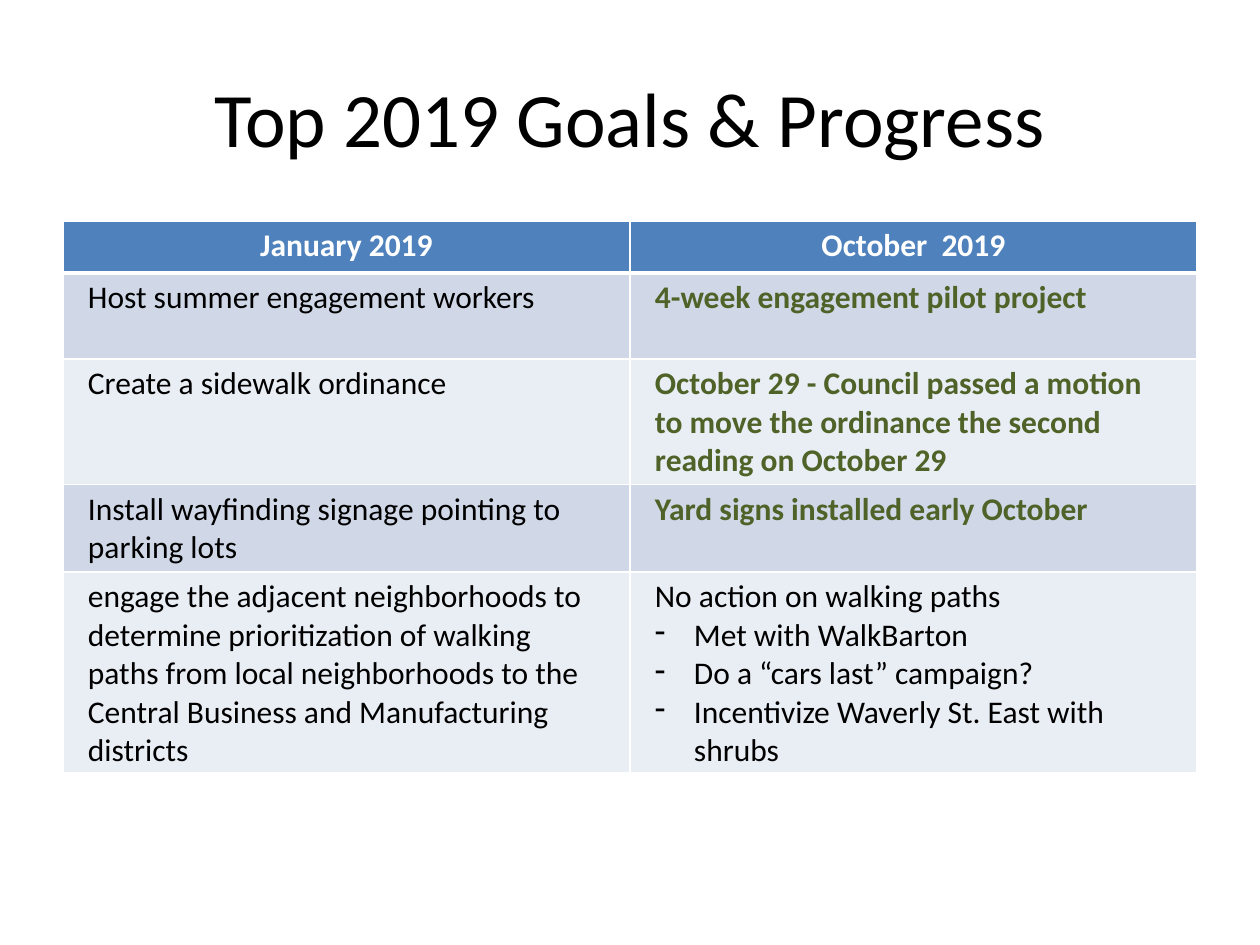
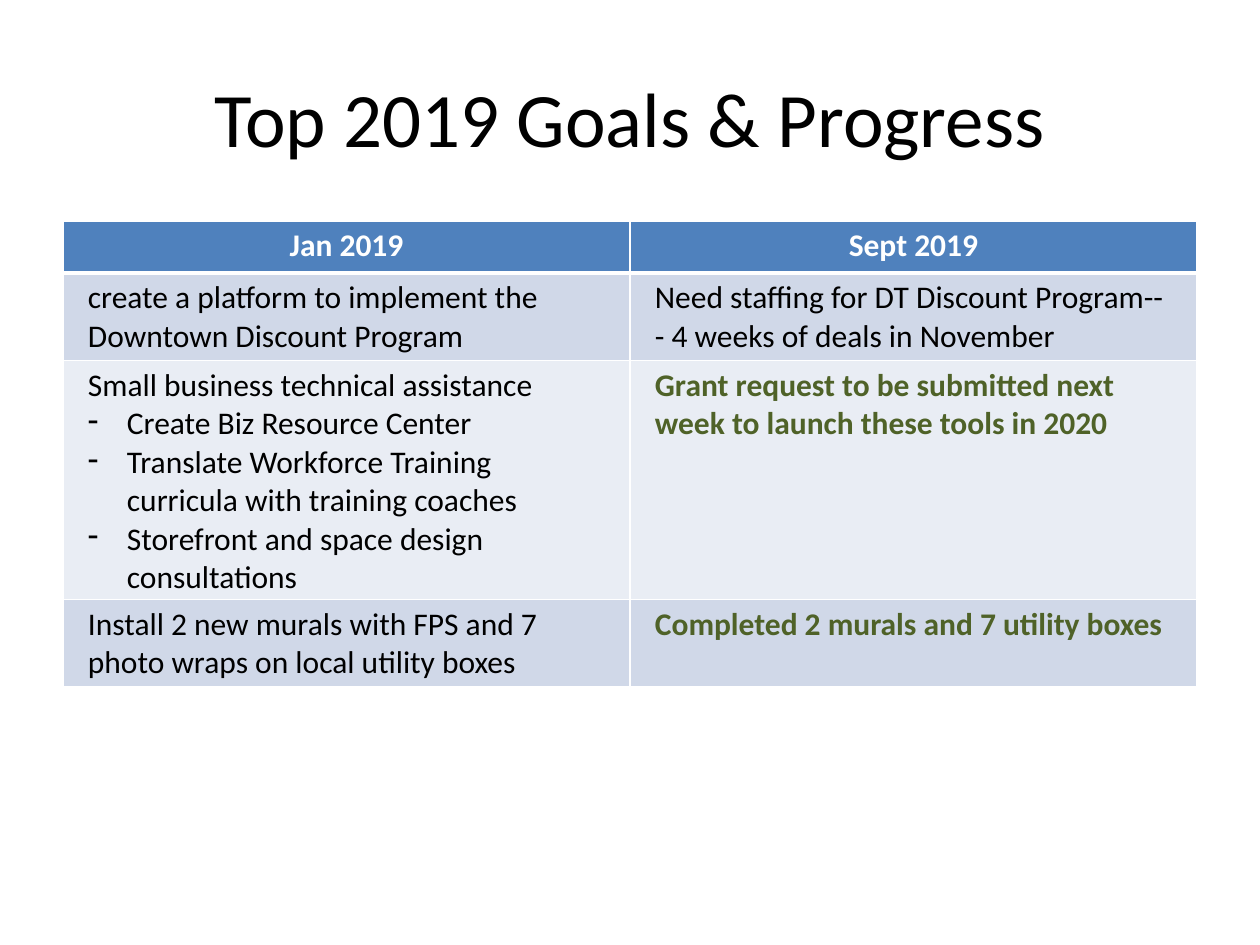
from lxml import etree
from pptx import Presentation
from pptx import util as u
from pptx.dml.color import RGBColor
from pptx.enum import text
from pptx.oxml import ns

PX = 914400 / 126
FONT = "Calibri"
WHITE, BLACK, BLUE, GREEN = "FFFFFF", "000000", "4F81BD", "4F6228"
BANDS = ("D0D8E8", "E9EDF4")
HEADER_HEIGHT, FIRST_GOAL_HEIGHT, GOAL_HEIGHT = 52, 86, 52
BULLET = "- "
BULLET_INDENT = 39

TITLE = "Top 2019 Goals & Progress"

EARLY_GOALS = [
    ("Host summer engagement workers", "4-week engagement pilot project", GREEN),
    ("Create a sidewalk ordinance",
     "October 29 - Council passed a motion to move the ordinance the second "
     "reading on October 29", GREEN),
    ("Install wayfinding signage pointing to parking lots",
     "Yard signs installed early October", GREEN),
    ("engage the adjacent neighborhoods to determine prioritization of walking "
     "paths from local neighborhoods to the Central Business and Manufacturing "
     "districts",
     "No action on walking paths\n"
     "- Met with WalkBarton\n"
     "- Do a “cars last” campaign?\n"
     "- Incentivize Waverly St. East with shrubs", BLACK),
]

BUSINESS_GOALS = [
    ("create a platform to implement the Downtown Discount Program",
     "Need staffing for DT Discount Program-- - 4 weeks of deals in November",
     BLACK),
    ("Small business technical assistance\n"
     "- Create Biz Resource Center\n"
     "- Translate Workforce Training curricula with training coaches\n"
     "- Storefront and space design consultations",
     "Grant request to be submitted next week to launch these tools in 2020",
     GREEN),
    ("Install 2 new murals with FPS and 7 photo wraps on local utility boxes",
     "Completed 2 murals and 7 utility boxes", GREEN),
]


def px(length):
    return u.Emu(round(length * PX))


def rgb(value):
    return RGBColor.from_string(value)


def add_bullet(paragraph):
    properties = paragraph._p.get_or_add_pPr()
    properties.set("marL", str(px(BULLET_INDENT)))
    properties.set("indent", str(-px(BULLET_INDENT)))
    etree.SubElement(properties, ns.qn("a:buChar")).set("char", BULLET.strip())


def write(frame, content, size=18, color=BLACK, bold=False, centered=False):
    frame.word_wrap = True
    for index, line in enumerate(content.split("\n")):
        paragraph = frame.add_paragraph() if index else frame.paragraphs[0]
        paragraph.alignment = text.PP_ALIGN.CENTER if centered else text.PP_ALIGN.LEFT
        if line.startswith(BULLET):
            add_bullet(paragraph)
        run = paragraph.add_run()
        run.text = line.removeprefix(BULLET)
        run.font.name = FONT
        run.font.size = u.Pt(size)
        run.font.bold = bold
        run.font.color.rgb = rgb(color)


def add_borders(cell, top=1, bottom=1):
    properties = cell._tc.get_or_add_tcPr()
    for side, width in (("L", 1), ("R", 1), ("T", top), ("B", bottom)):
        line = etree.SubElement(properties, ns.qn(f"a:ln{side}"), w=str(u.Pt(width)))
        fill = etree.SubElement(line, ns.qn("a:solidFill"))
        etree.SubElement(fill, ns.qn("a:srgbClr"), val=WHITE)


def fill_cell(cell, content, background, top=1, bottom=1, **style):
    cell.margin_left = cell.margin_right = px(25)
    cell.margin_top = cell.margin_bottom = px(6)
    add_borders(cell, top, bottom)
    cell.fill.solid()
    cell.fill.fore_color.rgb = rgb(background)
    write(cell.text_frame, content, **style)


def add_title(slide):
    title = slide.shapes.add_textbox(px(63), px(38), px(1134), px(157))
    title.text_frame.vertical_anchor = text.MSO_ANCHOR.MIDDLE
    write(title.text_frame, TITLE, size=44, centered=True)


def add_goal_table(slide, periods, goals):
    heights = [HEADER_HEIGHT, FIRST_GOAL_HEIGHT] + [GOAL_HEIGHT] * (len(goals) - 1)
    table = slide.shapes.add_table(len(heights), 2, px(63), px(221),
                                   px(1134), px(sum(heights))).table
    table.horz_banding = False
    for row, height in zip(table.rows, heights):
        row.height = px(height)
    for column, period in enumerate(periods):
        fill_cell(table.cell(0, column), period, BLUE, bottom=3,
                  color=WHITE, bold=True, centered=True)
    for row, (goal, progress, color) in enumerate(goals, 1):
        band = BANDS[(row - 1) % 2]
        top = 3 if row == 1 else 1
        fill_cell(table.cell(row, 0), goal, band, top=top)
        fill_cell(table.cell(row, 1), progress, band, top=top,
                  color=color, bold=color == GREEN)


def add_goal_slide(deck, periods, goals):
    slide = deck.slides.add_slide(deck.slide_layouts[6])
    add_title(slide)
    add_goal_table(slide, periods, goals)


def main():
    deck = Presentation()
    deck.slide_width, deck.slide_height = px(1260), px(945)
    add_goal_slide(deck, ("January 2019", "October  2019"), EARLY_GOALS)
    add_goal_slide(deck, ("Jan 2019", "Sept 2019"), BUSINESS_GOALS)
    deck.save("out.pptx")


if __name__ == "__main__":
    main()
